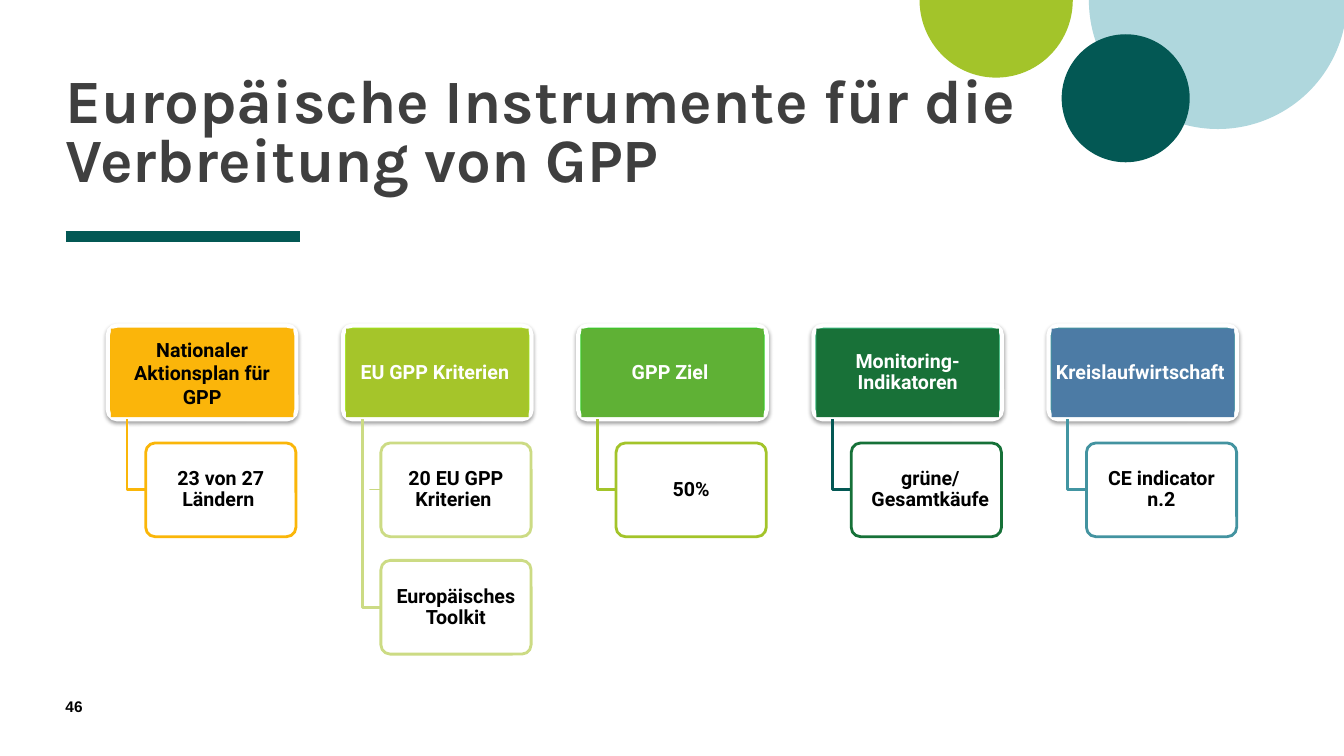
import lxml.etree
import pptx
import pptx.dml.color
import pptx.enum.shapes
import pptx.enum.text
import pptx.oxml
import pptx.oxml.ns
import pptx.util

Inches = pptx.util.Inches
Pt = pptx.util.Pt
Shapes = pptx.enum.shapes.MSO_SHAPE
Anchor = pptx.enum.text.MSO_ANCHOR
Align = pptx.enum.text.PP_ALIGN

COLORS = {
    "white": "FFFFFF", "black": "000000", "title": "3F3F3F",
    "teal": "035854", "sky": "AFD7DD", "lime": "A3C42A",
    "amber": "FBB50A", "amber_back": "FAB506", "amber_line": "FAB609",
    "olive": "A5C52A", "olive_back": "A0E316",
    "olive_line": "CCDB84", "olive_thin": "C9D87F",
    "green": "5FB135", "green_back": "32CC26",
    "forest": "187138", "forest_back": "35B579", "forest_line": "167138",
    "blue": "4C7BA5", "blue_back": "4393A0", "blue_elbow": "4295A2",
}

COLUMNS = [
    ("Nationaler Aktionsplan für GPP", "amber", "amber_back", "black", 1.0,
     "amber_line", [("23 von 27 Ländern ", "amber_line", 2)]),
    ("EU GPP Kriterien ", "olive", "olive_back", "white", 0.9,
     "olive_line", [("20 EU GPP Kriterien ", "olive_thin", 0.75),
                    ("Europäisches Toolkit", "olive_line", 2)]),
    ("GPP Ziel ", "green", "green_back", "white", 0.9,
     "lime", [("50%", "lime", 2)]),
    ("Monitoring- Indikatoren", "forest", "forest_back", "white", 0.9,
     "forest_line", [("grüne/\nGesamtkäufe", "teal", 2)]),
    ("Kreislaufwirtschaft ", "blue", "blue_back", "white", 0.9,
     "blue_back", [("CE indicator n.2", "blue_elbow", 2)]),
]
COLUMN_LEFT, COLUMN_STEP = 1.07, 2.3325
HEADER_TOP, BOX_HEIGHT, ROW_STEP = 3.23, 0.93, 1.165


def rgb(name):
    return pptx.dml.color.RGBColor.from_string(COLORS[name])


def paint(shape, fill, line=None, width=2):
    shape.shadow.inherit = False
    shape.fill.solid()
    shape.fill.fore_color.rgb = rgb(fill)
    if line:
        shape.line.color.rgb = rgb(line)
        shape.line.width = Pt(width)
    else:
        shape.line.fill.background()


def add_box(slide, kind, left, top, width, height, fill, line=None, weight=2):
    shape = slide.shapes.add_shape(
        kind, Inches(left), Inches(top), Inches(width), Inches(height))
    paint(shape, fill, line, weight)
    if kind == Shapes.ROUNDED_RECTANGLE:
        shape.adjustments[0] = 0.1
    return shape


def add_half_circle(slide, left, top, width, height, fill):
    shape = add_box(slide, Shapes.PIE, left, top, width, height, fill)
    shape.adjustments[0] = 0
    shape.adjustments[1] = 108


def add_soft_shadow(shape):
    effects = shape._element.spPr.find(pptx.oxml.ns.qn("a:effectLst"))
    effects.append(pptx.oxml.parse_xml(
        f'<a:outerShdw {pptx.oxml.ns.nsdecls("a")} blurRad="{Pt(3.1)}" '
        f'dist="{Pt(1.6)}" dir="5400000" rotWithShape="0">'
        '<a:srgbClr val="000000"><a:alpha val="37000"/></a:srgbClr>'
        '</a:outerShdw>'))


def write_label(shape, text, color, spacing):
    frame = shape.text_frame
    frame.word_wrap = True
    frame.vertical_anchor = Anchor.MIDDLE
    frame.margin_left = frame.margin_right = Inches(0.04)
    frame.margin_top = frame.margin_bottom = Inches(0.03)
    frame.text = text
    for paragraph in frame.paragraphs:
        paragraph.alignment = Align.CENTER
        paragraph.line_spacing = spacing
        set_font(paragraph, "Roboto", 14, color)


def set_font(paragraph, name, size, color):
    font = paragraph.font
    font.name, font.size, font.bold = name, Pt(size), True
    font.color.rgb = rgb(color)


def clear_margins(frame):
    frame.margin_left = frame.margin_right = 0
    frame.margin_top = frame.margin_bottom = 0
    frame.word_wrap = True


def add_elbow(slide, left, bottom, color, weight):
    top = HEADER_TOP + BOX_HEIGHT
    builder = slide.shapes.build_freeform(Inches(left), Inches(top))
    builder.add_line_segments(
        [(Inches(left), Inches(bottom)), (Inches(left + 0.19), Inches(bottom))],
        close=False)
    paint(builder.convert_to_shape(), "white", color, weight)


def add_column(slide, left, column):
    heading, fill, back, text_color, spacing, outline, cards = column
    header = add_box(slide, Shapes.ROUNDED_RECTANGLE, left, HEADER_TOP,
                     1.87, BOX_HEIGHT, back, "white", 3)
    add_soft_shadow(header)
    label = add_box(slide, Shapes.RECTANGLE, left + 0.03, HEADER_TOP + 0.03,
                    1.81, 0.88, fill)
    write_label(label, heading, text_color, spacing)
    for row, (text, elbow_color, elbow_weight) in enumerate(cards, 1):
        top = HEADER_TOP + row * ROW_STEP
        add_elbow(slide, left + 0.19, top + BOX_HEIGHT / 2, elbow_color, elbow_weight)
        add_box(slide, Shapes.ROUNDED_RECTANGLE, left + 0.375, top,
                1.49, BOX_HEIGHT, "white", outline)
        width = 1.52 if "\n" in text else 1.44
        text_box = slide.shapes.add_textbox(
            Inches(left + 0.4), Inches(top + 0.025), Inches(width), Inches(0.88))
        write_label(text_box, text, "black", 0.9)


def add_title_rule(slide):
    rule = slide.shapes.add_connector(
        pptx.enum.shapes.MSO_CONNECTOR.STRAIGHT,
        Inches(0.65), Inches(2.35), Inches(2.98), Inches(2.35))
    rule.line.color.rgb = rgb("teal")
    rule.line.width = Pt(8)
    lxml.etree.SubElement(rule._element.spPr, pptx.oxml.ns.qn("a:effectLst"))


def add_title(slide):
    title = slide.shapes.title
    title.left, title.top = Inches(0.65), Inches(0.3)
    title.width, title.height = Inches(10.69), Inches(1.63)
    frame = title.text_frame
    clear_margins(frame)
    frame.auto_size = pptx.enum.text.MSO_AUTO_SIZE.NONE
    frame.vertical_anchor = Anchor.BOTTOM
    frame.text = "Europäische Instrumente für die Verbreitung von GPP"
    paragraph = frame.paragraphs[0]
    paragraph.alignment = Align.LEFT
    paragraph.line_spacing = 0.8
    set_font(paragraph, "Karla", 44, "title")


def add_page_number(slide):
    text_box = slide.shapes.add_textbox(
        Inches(0.65), Inches(6.92), Inches(0.57), Inches(0.27))
    clear_margins(text_box.text_frame)
    text_box.text_frame.text = "46"
    set_font(text_box.text_frame.paragraphs[0], "Arial", 11, "black")


def main():
    presentation = pptx.Presentation()
    presentation.slide_width = Inches(13.33)
    presentation.slide_height = Inches(7.5)
    slide = presentation.slides.add_slide(presentation.slide_layouts[5])
    add_title_rule(slide)
    add_half_circle(slide, 10.8, -1.28, 2.56, 2.56, "sky")
    add_half_circle(slide, 9.12, -0.77, 1.52, 1.54, "lime")
    add_box(slide, Shapes.OVAL, 10.53, 0.34, 1.27, 1.27, "teal")
    add_title(slide)
    add_page_number(slide)
    for index, column in enumerate(COLUMNS):
        add_column(slide, COLUMN_LEFT + index * COLUMN_STEP, column)
    presentation.save("out.pptx")


if __name__ == "__main__":
    main()
